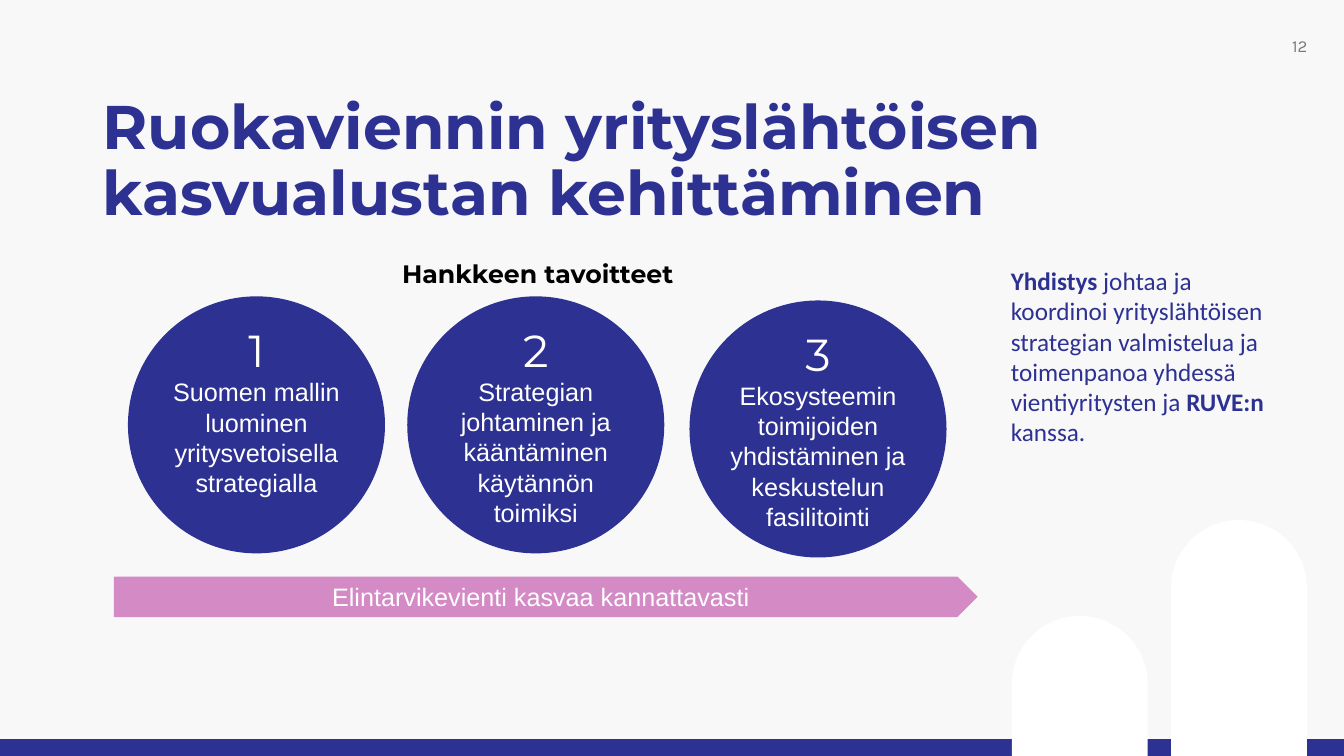
from pptx import Presentation
from pptx.dml.color import RGBColor
from pptx.enum.shapes import MSO_SHAPE
from pptx.enum.text import MSO_ANCHOR, MSO_AUTO_SIZE, PP_ALIGN
from pptx.util import Pt

RECTANGLE = MSO_SHAPE.RECTANGLE
OVAL = MSO_SHAPE.OVAL
PENTAGON = MSO_SHAPE.PENTAGON
ROUND_TOP = MSO_SHAPE.ROUND_2_SAME_RECTANGLE
TOP, MIDDLE = MSO_ANCHOR.TOP, MSO_ANCHOR.MIDDLE
LEFT, CENTER, RIGHT = PP_ALIGN.LEFT, PP_ALIGN.CENTER, PP_ALIGN.RIGHT

BACKGROUND = RGBColor(0xF8, 0xF8, 0xF8)
NAVY = RGBColor(0x2D, 0x31, 0x92)
PINK = RGBColor(0xD3, 0x8A, 0xC5)
WHITE = RGBColor(0xFF, 0xFF, 0xFF)
BLACK = RGBColor(0, 0, 0)
GRAY = RGBColor(0x79, 0x79, 0x79)

PAGE_WIDTH, PAGE_HEIGHT = 960, 540
CIRCLE_SIZE = 183.6
GOALS = [
    (91.4, 211.7, 21, "Suomen mallin luominen yritysvetoisella strategialla"),
    (290.9, 211.7, 0, "Strategian johtaminen ja kääntäminen käytännön toimiksi"),
    (492.5, 214.6, 0, "Ekosysteemin toimijoiden yhdistäminen ja keskustelun fasilitointi"),
]
LEAD = [
    ("Yhdistys ", True),
    ("johtaa ja koordinoi yrityslähtöisen strategian valmistelua ja "
     "toimenpanoa yhdessä vientiyritysten ja ", False),
    ("RUVE:n", True),
    (" kanssa.", False),
]


def style_font(font, name, size, color, bold=False):
    font.name = name
    font.size = Pt(size)
    font.color.rgb = color
    font.bold = bold


def write_para(para, text, name, size, color, bold=False, align=CENTER):
    para.text = text
    para.alignment = align
    for span in para.runs:
        style_font(span.font, name, size, color, bold)


def add_block(page, kind, left, top, width, height, color):
    block = page.shapes.add_shape(kind, Pt(left), Pt(top), Pt(width), Pt(height))
    block.shadow.inherit = False
    block.fill.solid()
    block.fill.fore_color.rgb = color
    block.line.fill.background()
    return block


def add_text_box(page, left, top, width, height, anchor=TOP):
    box = page.shapes.add_textbox(Pt(left), Pt(top), Pt(width), Pt(height))
    box.text_frame.word_wrap = True
    box.text_frame.vertical_anchor = anchor
    return box.text_frame.paragraphs[0]


def add_pillar(page, left, top):
    pillar = add_block(page, ROUND_TOP, left, top, 97, PAGE_HEIGHT - top, WHITE)
    pillar.adjustments[0] = 0.5


def add_title(page, text):
    title = page.shapes.title
    title.left, title.top, title.width, title.height = Pt(66), Pt(64), Pt(828), Pt(104.4)
    frame = title.text_frame
    frame.auto_size = MSO_AUTO_SIZE.NONE
    frame.vertical_anchor = MIDDLE
    para = frame.paragraphs[0]
    write_para(para, text, "Montserrat", 44, NAVY, True, LEFT)
    para.line_spacing = 0.9


def add_goal(page, number, left, top, bottom_inset, text):
    circle = add_block(page, OVAL, left, top, CIRCLE_SIZE, CIRCLE_SIZE, NAVY)
    frame = circle.text_frame
    frame.word_wrap = True
    frame.vertical_anchor = MIDDLE
    frame.margin_left = frame.margin_right = frame.margin_top = 0
    frame.margin_bottom = Pt(bottom_inset)
    write_para(frame.paragraphs[0], str(number), "Montserrat", 32, WHITE)
    write_para(frame.add_paragraph(), text, "Arial", 18, WHITE)


def add_lead(page):
    para = add_text_box(page, 715, 186, 196, 170)
    for text, bold in LEAD:
        span = para.add_run()
        span.text = text
        style_font(span.font, "Calibri", 18, NAVY, bold)


def add_arrow(page, text):
    arrow = add_block(page, PENTAGON, 81.4, 411.8, 617, 29, PINK)
    arrow.text_frame.word_wrap = True
    arrow.text_frame.vertical_anchor = MIDDLE
    write_para(arrow.text_frame.paragraphs[0], text, "Arial", 18, WHITE)


def main():
    deck = Presentation()
    deck.slide_width, deck.slide_height = Pt(PAGE_WIDTH), Pt(PAGE_HEIGHT)
    page = deck.slides.add_slide(deck.slide_layouts[5])
    page.background.fill.solid()
    page.background.fill.fore_color.rgb = BACKGROUND

    add_block(page, RECTANGLE, 0, 528, PAGE_WIDTH, 12, NAVY)
    add_pillar(page, 722.8, 440)
    add_pillar(page, 836.5, 371.5)

    add_title(page, "Ruokaviennin yrityslähtöisen kasvualustan kehittäminen")
    add_lead(page)
    for number, goal in enumerate(GOALS, 1):
        add_goal(page, number, *goal)
    heading = add_text_box(page, 75.6, 180.7, 617, 29)
    write_para(heading, "Hankkeen tavoitteet", "Montserrat", 18, BLACK, True)
    add_arrow(page, "Elintarvikevienti kasvaa kannattavasti")
    page_number = add_text_box(page, 725, 18, 216, 29, MIDDLE)
    write_para(page_number, "12", "Karla", 12, GRAY, align=RIGHT)

    deck.save("out.pptx")


if __name__ == "__main__":
    main()
